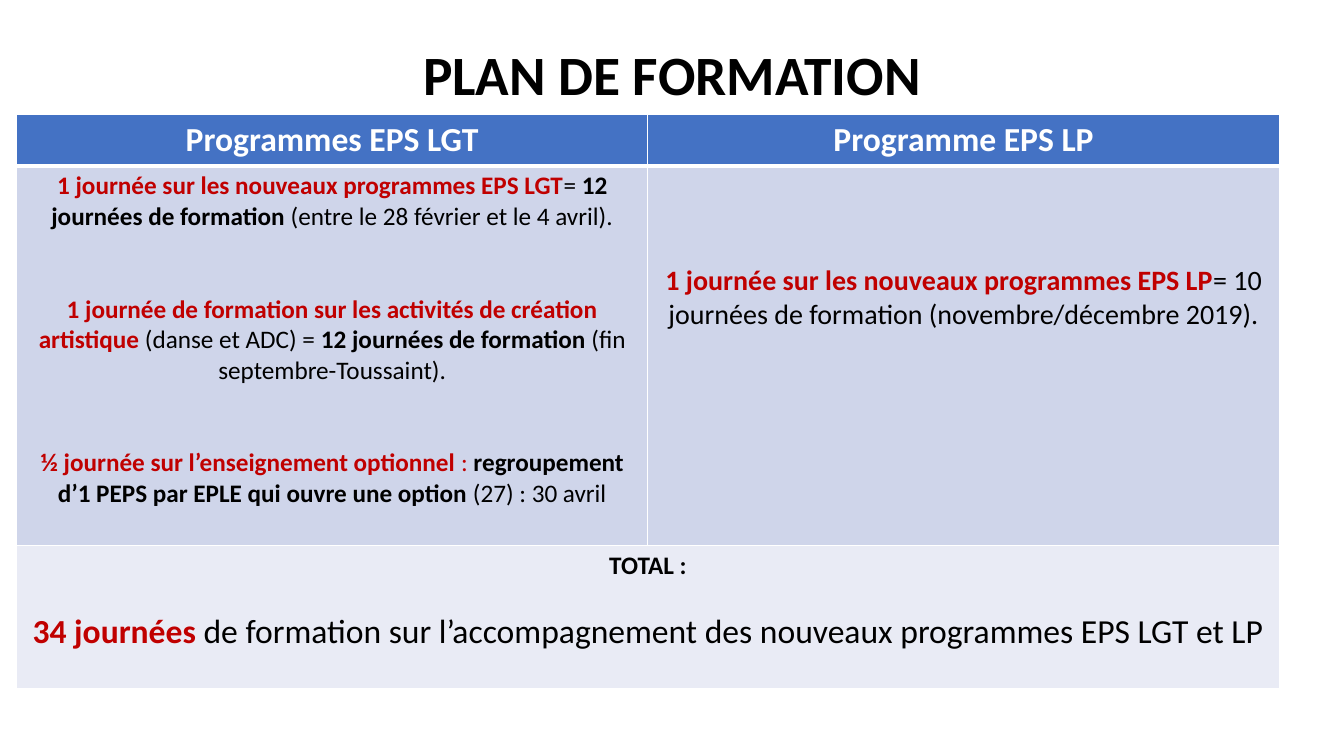
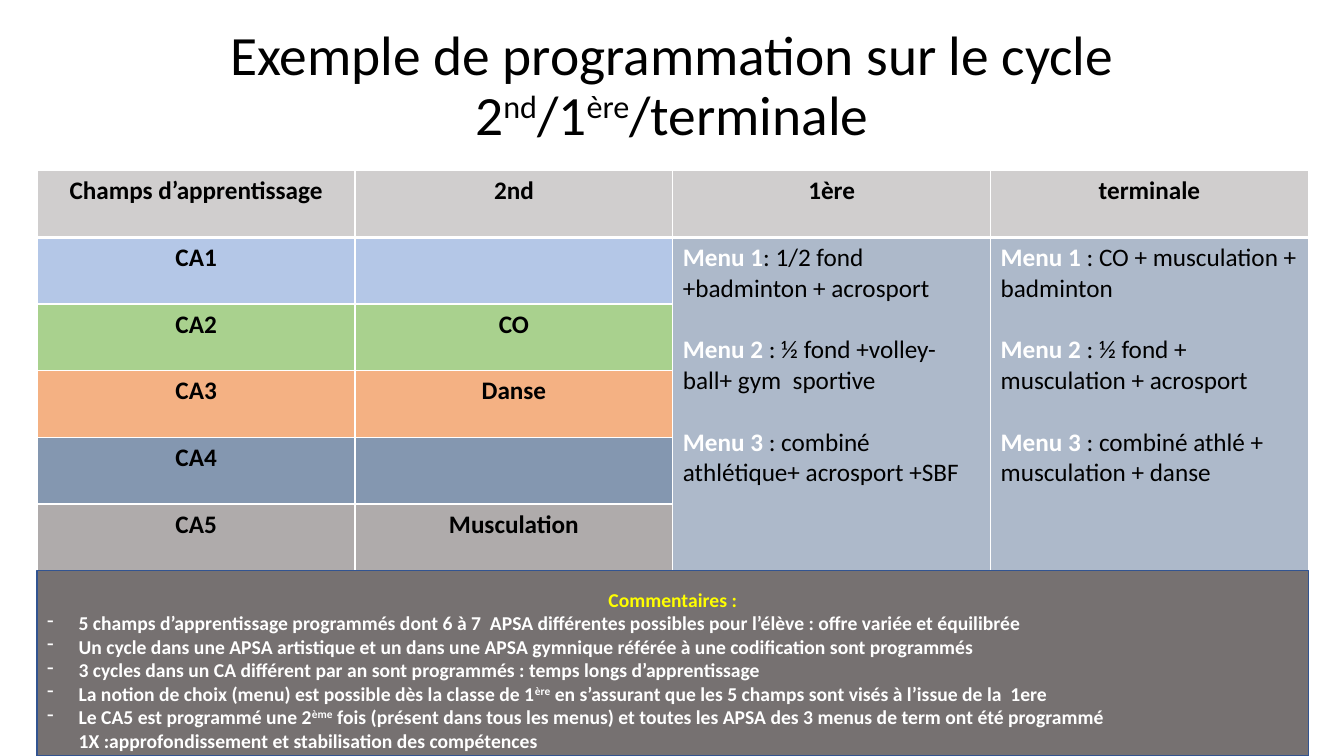
from lxml import etree
from pptx import Presentation
from pptx.dml import color as dml
from pptx.enum import shapes, text
from pptx.oxml import ns
from pptx.util import Pt

BLACK, WHITE, RED, YELLOW = "000000", "FFFFFF", "C00000", "FFFF00"
BLUE, PALE_BLUE, PALE_GREY = "4472C4", "CFD5EA", "E9EBF5"
HEADER_GREY, MENU_BLUE, COMMENT_GREY, OUTLINE = "D0CECE", "ADB9CA", "767171", "325491"
LEFT, CENTER = text.PP_ALIGN.LEFT, text.PP_ALIGN.CENTER
BLANK_LINE = 22


def rgb(value):
    return dml.RGBColor.from_string(value)


def write(paragraph, content, size=18, color=BLACK, bold=False, raised=False):
    run = paragraph.add_run()
    run.text = content
    run.font.name = "Calibri"
    run.font.size = Pt(size)
    run.font.bold = bold
    run.font.color.rgb = rgb(color)
    if raised:
        run._r.get_or_add_rPr().set("baseline", "30000")


def fill_frame(frame, paragraphs, align=LEFT, gap=0, **style):
    for index, runs in enumerate(paragraphs):
        paragraph = frame.add_paragraph() if index else frame.paragraphs[0]
        paragraph.alignment = align
        if index and gap:
            paragraph.space_before = Pt(gap)
        for content, changes in runs:
            write(paragraph, content, **{**style, **changes})


def add_dash(paragraph, indent):
    properties = paragraph._p.get_or_add_pPr()
    properties.set("marL", str(Pt(indent)))
    properties.set("indent", str(-Pt(indent)))
    etree.SubElement(properties, ns.qn("a:buChar")).set("char", "-")


def add_borders(cell, bottom):
    properties = cell._tc.get_or_add_tcPr()
    for side, width in (("L", 1), ("R", 1), ("T", 1), ("B", bottom)):
        line = etree.SubElement(properties, ns.qn(f"a:ln{side}"), w=str(Pt(width)))
        solid = etree.SubElement(line, ns.qn("a:solidFill"))
        etree.SubElement(solid, ns.qn("a:srgbClr"), val=WHITE)


class Deck:
    def __init__(self):
        self.presentation = Presentation()
        self.presentation.slide_width = Pt(960)
        self.presentation.slide_height = Pt(540)
        self.slide = None

    def add_slide(self, title, height, bold=False):
        layout = self.presentation.slide_layouts[5]
        self.slide = self.presentation.slides.add_slide(layout)
        shape = self.slide.shapes.title
        shape.left, shape.top = Pt(66), Pt(28.8)
        shape.width, shape.height = Pt(828), Pt(height)
        frame = shape.text_frame
        frame.word_wrap = True
        frame.auto_size = text.MSO_AUTO_SIZE.NONE
        frame.vertical_anchor = text.MSO_ANCHOR.MIDDLE
        fill_frame(frame, [title], CENTER, size=39.6, bold=bold)
        frame.paragraphs[0].line_spacing = 0.9

    def add_table(self, left, top, column_width, columns, heights):
        frame = self.slide.shapes.add_table(
            len(heights), columns, Pt(left), Pt(top),
            Pt(column_width * columns), Pt(sum(heights)))
        table = frame.table
        table.horz_banding = False
        for column in table.columns:
            column.width = Pt(column_width)
        for row, height in zip(table.rows, heights):
            row.height = Pt(height)
        for index in range(len(heights)):
            for cell in table.rows[index].cells:
                add_borders(cell, 1 if index else 3)
        return table

    def set_cell(self, cell, fill, paragraphs=(), align=CENTER, **style):
        cell.fill.solid()
        cell.fill.fore_color.rgb = rgb(fill)
        fill_frame(cell.text_frame, paragraphs, align, **style)

    def add_header(self, table, labels, fill, **style):
        for cell, label in zip(table.rows[0].cells, labels):
            self.set_cell(cell, fill, [[(label, {})]], bold=True, **style)

    def add_comments(self, left, top, width, height, heading, remarks):
        shape = self.slide.shapes.add_shape(
            shapes.MSO_SHAPE.RECTANGLE, Pt(left), Pt(top), Pt(width), Pt(height))
        shape.shadow.inherit = False
        shape.fill.solid()
        shape.fill.fore_color.rgb = rgb(COMMENT_GREY)
        shape.line.color.rgb = rgb(OUTLINE)
        shape.line.width = Pt(1)
        frame = shape.text_frame
        frame.word_wrap = True
        frame.vertical_anchor = text.MSO_ANCHOR.TOP
        frame.margin_top, frame.margin_bottom = Pt(12), Pt(0)
        heading_runs = [(heading, {"color": YELLOW})]
        fill_frame(frame, [heading_runs, *remarks], size=14, color=WHITE, bold=True)
        frame.paragraphs[0].alignment = CENTER
        for paragraph in frame.paragraphs[1:]:
            add_dash(paragraph, 22.5)


def build_training_plan(deck):
    strong, key = {"bold": True}, {"bold": True, "color": RED}
    deck.add_slide([("PLAN DE FORMATION", {})], 53.2, bold=True)
    table = deck.add_table(11.8, 82, 451, 2, [36.5, 271, 102])
    deck.add_header(table, ["Programmes EPS LGT", "Programme EPS LP"], BLUE,
                    size=24, color=WHITE)
    deck.set_cell(table.cell(1, 0), PALE_BLUE, [
        [("1 journée sur les nouveaux programmes EPS LGT", key), ("= ", {}),
         ("12 journées de formation ", strong),
         ("(entre le 28 février et le 4 avril).", {})],
        [("1 journée de formation sur les activités de création artistique ", key),
         ("(danse et ADC) = ", {}), ("12 journées de formation ", strong),
         ("(fin septembre-Toussaint).", {})],
        [("½ journée sur l’enseignement optionnel ", key), (": ", {"color": RED}),
         ("regroupement d’1 PEPS par EPLE qui ouvre une option ", strong),
         ("(27) : 30 avril", {})],
    ], gap=2 * BLANK_LINE)
    vocational = table.cell(1, 1)
    vocational.margin_top = Pt(3.6 + 3 * BLANK_LINE)
    deck.set_cell(vocational, PALE_BLUE, [
        [("1 journée sur les nouveaux programmes EPS LP", key),
         ("= 10 journées de formation (novembre/décembre 2019).", {})],
    ], size=20)
    total = table.cell(2, 0)
    total.merge(table.cell(2, 1))
    deck.set_cell(total, PALE_GREY, [
        [("TOTAL :", {"bold": True, "size": 18})],
        [("34 journées ", key),
         ("de formation sur l’accompagnement des nouveaux programmes EPS LGT et LP", {})],
    ], size=24, gap=BLANK_LINE)


def build_cycle_example(deck):
    raised = {"raised": True}
    deck.add_slide([("Exemple de programmation sur le cycle 2", {}), ("nd", raised),
                    ("/1", {}), ("ère", raised), ("/terminale", {})], 67.7)
    left, top, column_width, row_height = 26.6, 122, 227, 47.6
    table = deck.add_table(left, top, column_width, 4, [row_height] * 6)
    deck.add_header(table, ["Champs d’apprentissage", "2nd", "1ère", "terminale"],
                    HEADER_GREY)
    fields = [("CA1", "", "B4C7E7"), ("CA2", "CO", "A9D18E"), ("CA3", "Danse", "F4B183"),
              ("CA4", "", "8497B0"), ("CA5", "Musculation", "AFABAB")]
    for row, (field, activity, fill) in enumerate(fields, 1):
        for column, label in enumerate((field, activity)):
            paragraphs = [[(label, {})]] if label else []
            deck.set_cell(table.cell(row, column), fill, paragraphs, bold=True)
    menus = [
        [("Menu 1", ": 1/2 fond +badminton + acrosport"),
         ("Menu 2 ", ": ½ fond +volley-ball+ gym  sportive"),
         ("Menu 3 ", ": combiné athlétique+ acrosport +SBF")],
        [("Menu 1 ", ": CO + musculation + badminton"),
         ("Menu 2 ", ": ½ fond + musculation + acrosport"),
         ("Menu 3 ", ": combiné athlé + musculation + danse")],
    ]
    for column, choices in enumerate(menus, 2):
        cell = table.cell(1, column)
        cell.merge(table.cell(5, column))
        paragraphs = [[(name, {"color": WHITE, "bold": True}), (content, {})]
                      for name, content in choices]
        deck.set_cell(cell, MENU_BLUE, paragraphs, LEFT, gap=BLANK_LINE)
    bottom = top + 6 * row_height
    deck.add_comments(left, bottom, 4 * column_width, 540 - bottom, "Commentaires :", [
        [("5 champs d’apprentissage programmés dont 6 à 7  APSA différentes possibles "
          "pour l’élève : offre variée et équilibrée", {})],
        [("Un cycle dans une APSA artistique et un dans une APSA gymnique référée "
          "à une codification sont programmés", {})],
        [("3 cycles dans un CA différent par an sont programmés : "
          "temps longs d’apprentissage", {})],
        [("La notion de choix (menu) est possible dès la classe de 1", {}), ("ère", raised),
         (" en s’assurant que les 5 champs sont visés à l’issue de la  1ere", {})],
        [("Le CA5 est programmé une 2", {}), ("ème", raised),
         (" fois (présent dans tous les menus) et toutes les APSA des 3 menus de term "
          "ont été programmé 1X :approfondissement et stabilisation des compétences", {})],
    ])


def main():
    deck = Deck()
    build_training_plan(deck)
    build_cycle_example(deck)
    deck.presentation.save("out.pptx")


if __name__ == "__main__":
    main()
